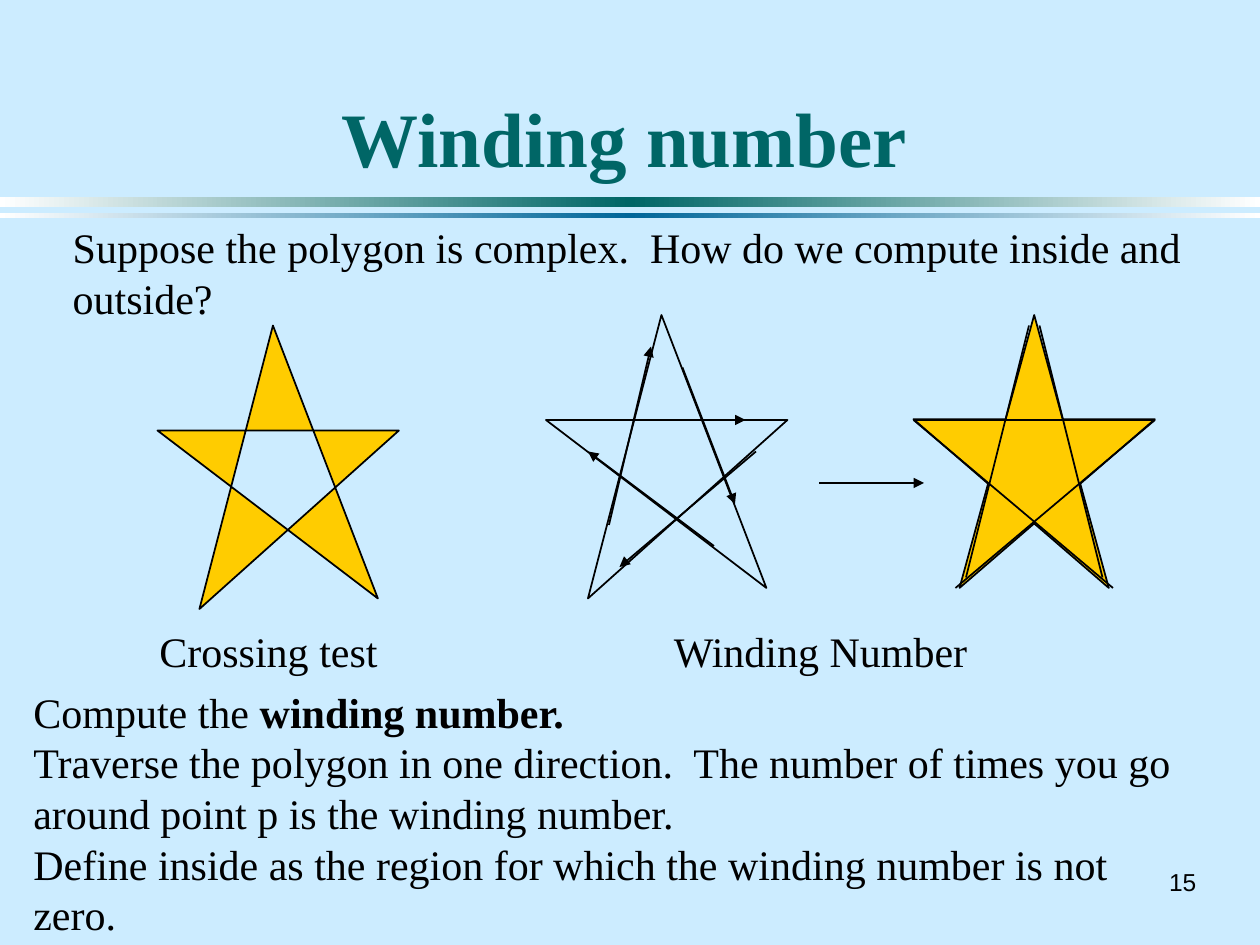
import copy

import lxml.etree
import pptx
import pptx.dml.color
import pptx.enum.shapes
import pptx.enum.text
import pptx.oxml.ns
import pptx.util

RGBColor = pptx.dml.color.RGBColor
Shape = pptx.enum.shapes.MSO_SHAPE
Anchor = pptx.enum.text.MSO_ANCHOR
Align = pptx.enum.text.PP_ALIGN
AutoSize = pptx.enum.text.MSO_AUTO_SIZE
qn = pptx.oxml.ns.qn

EMU_PER_PX = 9525
SKY = RGBColor(0xCC, 0xEC, 0xFF)
TEAL = RGBColor(0x00, 0x66, 0x66)
BLUE = RGBColor(0x00, 0x66, 0x99)
GOLD = RGBColor(0xFF, 0xCC, 0x00)
BLACK = RGBColor(0, 0, 0)
WHITE = RGBColor(0xFF, 0xFF, 0xFF)
SERIF = "Times New Roman"
SANS = "Arial"


def px(*lengths):
    return [length * EMU_PER_PX for length in lengths]


class SlideBuilder:
    def __init__(self, slide):
        self.slide = slide
        self.shapes = slide.shapes
        self.line_width = pptx.util.Pt(1)
        slide.background.fill.solid()
        slide.background.fill.fore_color.rgb = SKY

    def style(self, shape, fill=None):
        """Thin black outline, with a solid fill or none."""
        shape.shadow.inherit = False
        shape.line.color.rgb = BLACK
        shape.line.width = self.line_width
        if fill is None:
            shape.fill.background()
        else:
            shape.fill.solid()
            shape.fill.fore_color.rgb = fill

    def gradient_bar(self, top, height, middle):
        """Full-width bar that fades to white at both ends."""
        bar = self.shapes.add_shape(Shape.RECTANGLE, *px(0, top, 960, height))
        bar.shadow.inherit = False
        bar.line.fill.background()
        bar.fill.gradient()
        bar.fill.gradient_angle = 0
        stop_list = bar._element.spPr.find(".//" + qn("a:gsLst"))
        stop_list.append(copy.deepcopy(stop_list[0]))
        colors = (WHITE, middle, WHITE)
        for stop, position, color in zip(bar.fill.gradient_stops, (0, 0.5, 1), colors):
            stop.position = position
            stop.color.rgb = color

    def text(self, box, content, size=24, font=SERIF, color=BLACK, bold=False,
             align=Align.LEFT, anchor=Anchor.TOP, wrap=True, grow=True, spacing=None):
        frame = self.shapes.add_textbox(*px(*box)).text_frame
        frame.text = content
        frame.word_wrap = wrap
        frame.auto_size = AutoSize.SHAPE_TO_FIT_TEXT if grow else AutoSize.NONE
        frame.vertical_anchor = anchor
        for paragraph in frame.paragraphs:
            paragraph.alignment = align
            if spacing:
                paragraph.line_spacing = pptx.util.Pt(spacing)
            for run in paragraph.runs:
                self.format_run(run, size, font, color, bold)
        return frame

    def format_run(self, run, size=24, font=SERIF, color=BLACK, bold=False):
        run.font.size = pptx.util.Pt(size)
        run.font.name = font
        run.font.color.rgb = color
        run.font.bold = bold

    def polygon(self, points, fill=None):
        builder = self.shapes.build_freeform(*points[0], scale=EMU_PER_PX)
        builder.add_line_segments(points[1:], close=True)
        self.style(builder.convert_to_shape(), fill)

    def star(self, left, top, width, height):
        shape = self.shapes.add_shape(Shape.STAR_5_POINT, *px(left, top, width, height))
        self.style(shape, GOLD)

    def line(self, ends, arrow=False):
        connector = self.shapes.add_connector(
            pptx.enum.shapes.MSO_CONNECTOR.STRAIGHT, *px(*ends))
        connector.line.color.rgb = BLACK
        connector.line.width = self.line_width
        properties = connector._element.spPr
        if arrow:
            outline = properties.find(qn("a:ln"))
            lxml.etree.SubElement(outline, qn("a:tailEnd"), type="triangle")
        lxml.etree.SubElement(properties, qn("a:effectLst"))


STAR_POINTS = [(120, 328), (304, 328), (152, 464), (208, 248), (288, 456)]
WINDING_STAR_OFFSET = (296, -8)
DIRECTION_ARROWS = [
    (440, 320, 568, 320),
    (576, 344, 472, 432),
    (464, 400, 496, 264),
    (520, 280, 560, 384),
    (544, 416, 448, 344),
]
FILLED_STAR_EDGES = [
    (696, 320, 880, 320),
    (880, 320, 728, 448),
    (736, 440, 784, 248),
    (792, 248, 840, 440),
    (848, 448, 696, 320),
]
EXPLANATION = "\n".join([
    "Compute the ",
    "Traverse the polygon in one direction.  The number of times you go "
    "around point p is the winding number.",
    "Define inside as the region for which the winding number is not zero.",
])
LINE_SPACING = 28.9


def main():
    presentation = pptx.Presentation()
    presentation.slide_width, presentation.slide_height = px(960, 720)
    builder = SlideBuilder(presentation.slides.add_slide(presentation.slide_layouts[6]))

    builder.gradient_bar(150, 8, TEAL)
    builder.gradient_bar(162, 4, BLUE)
    builder.text((880, 656, 41, 32), "15", size=14, font=SANS, align=Align.RIGHT,
                 anchor=Anchor.MIDDLE, wrap=False)
    builder.text((64, 24, 824, 120), "Winding number", size=44, color=TEAL, bold=True,
                 align=Align.CENTER, anchor=Anchor.BOTTOM, grow=False)
    builder.text((46, 164, 881, 86),
                 "Suppose the polygon is complex.  How do we compute inside and outside?",
                 spacing=LINE_SPACING)
    explanation = builder.text((16, 518, 896, 202), EXPLANATION, spacing=LINE_SPACING)
    term = explanation.paragraphs[0].add_run()
    term.text = "winding number."
    builder.format_run(term, bold=True)

    builder.polygon(STAR_POINTS, GOLD)
    shift_x, shift_y = WINDING_STAR_OFFSET
    builder.polygon([(x + shift_x, y + shift_y) for x, y in STAR_POINTS])
    for ends in DIRECTION_ARROWS:
        builder.line(ends, arrow=True)

    builder.star(696, 240, 184, 208)
    for ends in FILLED_STAR_EDGES:
        builder.line(ends)
    builder.line((624, 368, 704, 368), arrow=True)

    for left, width, label in ((112, 190, "Crossing test"), (504, 248, "Winding Number")):
        builder.text((left, 472, width, 48), label, grow=False, spacing=LINE_SPACING)

    presentation.save("out.pptx")


if __name__ == "__main__":
    main()
